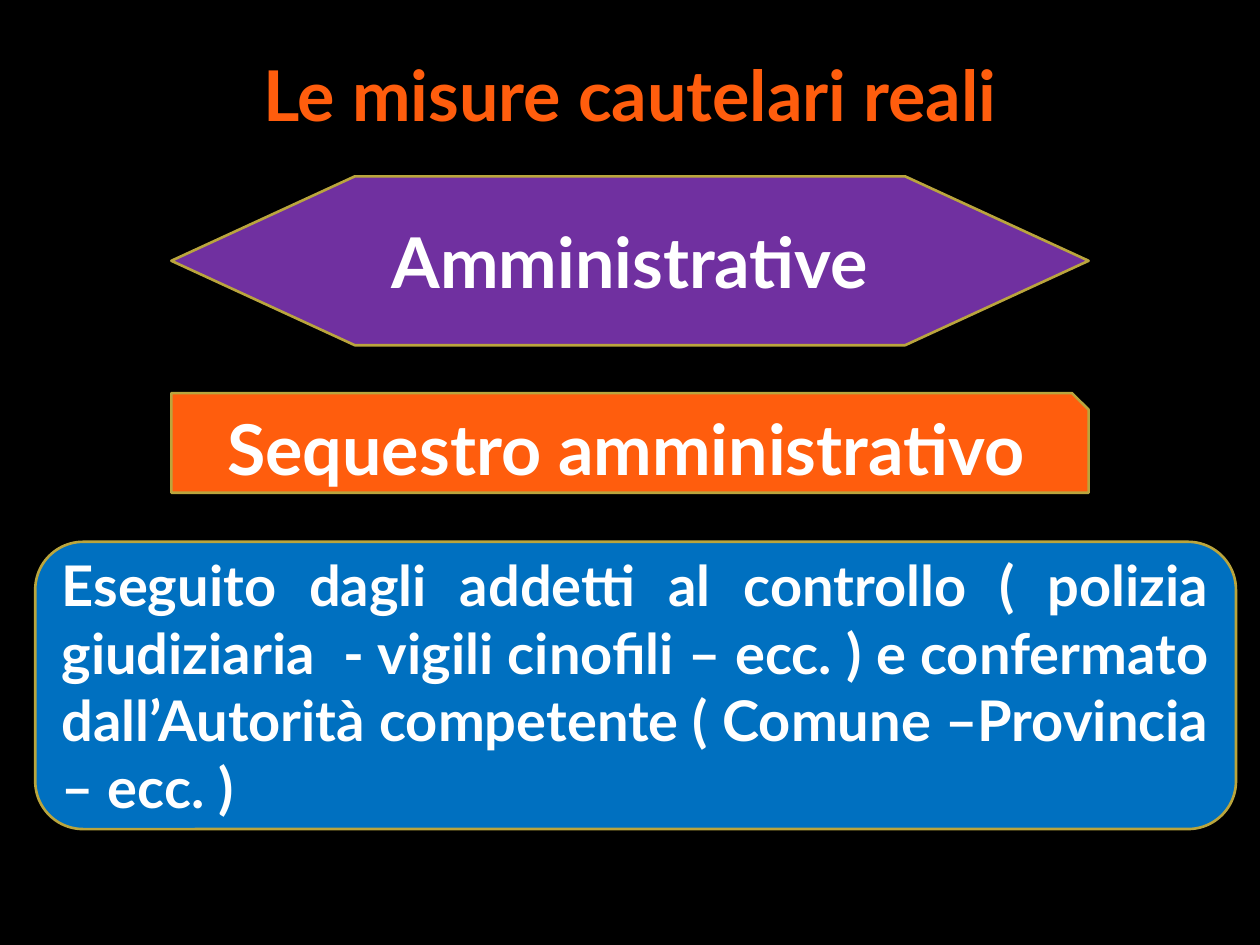
from pptx import Presentation
from pptx.dml.color import RGBColor
from pptx.enum.shapes import MSO_SHAPE
from pptx.enum.text import MSO_ANCHOR, PP_ALIGN
from pptx.util import Inches, Pt

WIDTH, HEIGHT = 10, 7.5
FONT = "Lato"
COLORS = {
    "background": "000000",
    "orange": "FF5D0D",
    "purple": "7030A0",
    "blue": "0070C0",
    "outline": "BAA53D",
    "white": "FFFFFF",
}


def color(name):
    return RGBColor.from_string(COLORS[name])


def centered(width, top, height):
    """Box of the given size, centred across the slide."""
    return [Inches(v) for v in ((WIDTH - width) / 2, top, width, height)]


def write(frame, text, size, ink="white", align=PP_ALIGN.CENTER,
          anchor=MSO_ANCHOR.MIDDLE):
    frame.word_wrap = True
    frame.vertical_anchor = anchor
    paragraph = frame.paragraphs[0]
    paragraph.text = text
    paragraph.alignment = align
    font = paragraph.font
    font.name, font.size, font.bold = FONT, Pt(size), True
    font.color.rgb = color(ink)


def add_panel(slide, preset, box, fill, outline="outline", weight=1.5):
    panel = slide.shapes.add_shape(preset, *box)
    panel.shadow.inherit = False
    panel.fill.solid()
    panel.fill.fore_color.rgb = color(fill)
    panel.line.color.rgb = color(outline)
    panel.line.width = Pt(weight)
    return panel.text_frame


def add_title(slide, text, box):
    title = slide.shapes.add_textbox(*box)
    write(title.text_frame, text, 40, "orange", anchor=MSO_ANCHOR.TOP)


def main():
    deck = Presentation()
    deck.slide_width, deck.slide_height = Inches(WIDTH), Inches(HEIGHT)
    slide = deck.slides.add_slide(deck.slide_layouts[6])
    column = 7.28  # shared width of the two upper panels

    # Black backdrop and title
    add_panel(slide, MSO_SHAPE.RECTANGLE, centered(WIDTH, 0, HEIGHT),
              "background", "background", 0.75)
    add_title(slide, "Le misure cautelari reali", centered(9, 0.36, 1.02))

    # Kind of measure
    category = add_panel(slide, MSO_SHAPE.FLOWCHART_PREPARATION,
                         centered(column, 1.4, 1.34), "purple")
    write(category, "Amministrative", 40)

    # The measure itself
    measure = add_panel(slide, MSO_SHAPE.SNIP_1_RECTANGLE,
                        centered(column, 3.12, 0.79), "orange")
    write(measure, "Sequestro amministrativo", 40)

    # Who carries it out and who confirms it
    authorities_box = [Inches(v) for v in (0.28, 4.3, 9.53, 2.28)]
    authorities = add_panel(slide, MSO_SHAPE.ROUNDED_RECTANGLE,
                            authorities_box, "blue")
    write(authorities,
          "Eseguito dagli addetti al controllo ( polizia giudiziaria  - "
          "vigili cinofili – ecc. ) e confermato dall’Autorità competente "
          "( Comune –Provincia – ecc. )", 32, align=PP_ALIGN.JUSTIFY)

    deck.save("out.pptx")


if __name__ == "__main__":
    main()
